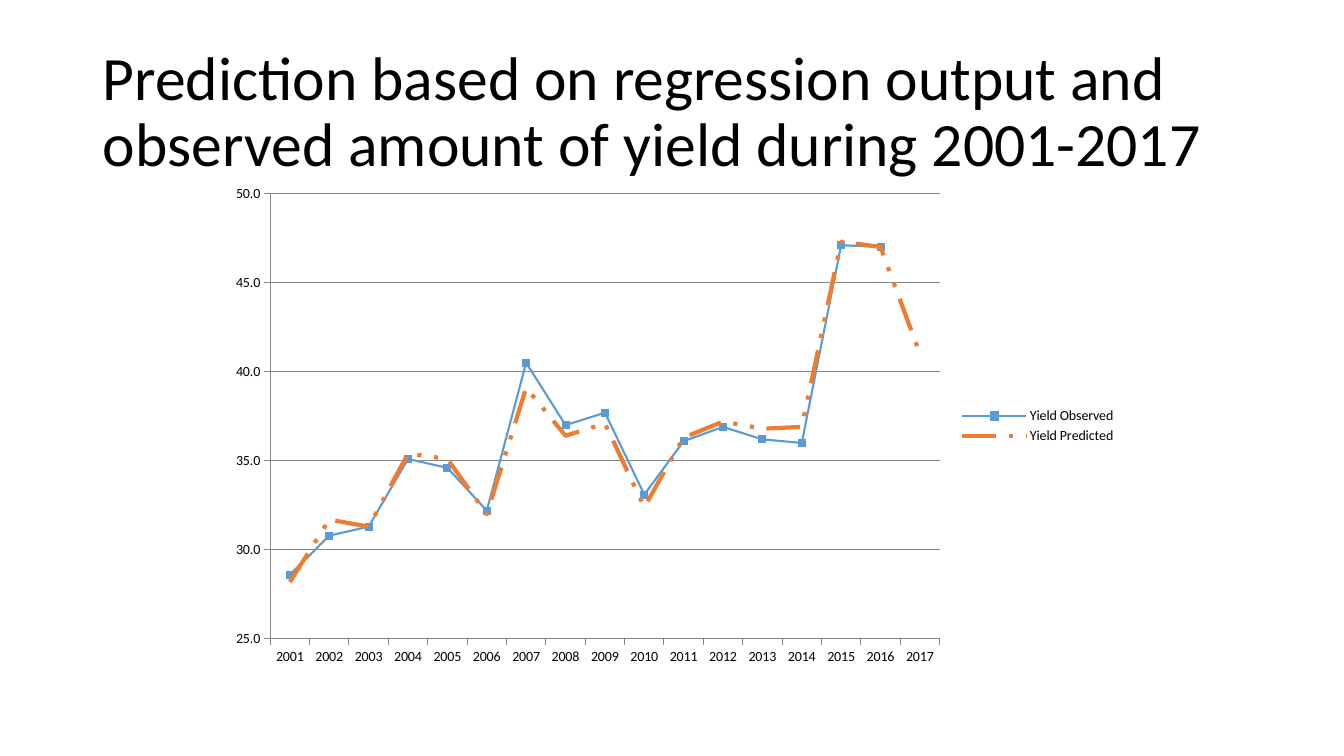
"""Build a slide that charts observed and predicted yield."""
from dataclasses import dataclass
from typing import Optional

from lxml.etree import SubElement as Sub
from pptx import Presentation
from pptx.chart.data import CategoryChartData as Data
from pptx.dml.color import RGBColor as Rgb
from pptx.enum.chart import XL_CHART_TYPE as Kind
from pptx.enum.chart import XL_LEGEND_POSITION as Place
from pptx.enum.chart import XL_MARKER_STYLE as Mark
from pptx.enum.chart import XL_TICK_MARK as Tick
from pptx.enum.dml import MSO_LINE as Dash
from pptx.enum.text import MSO_ANCHOR as Anchor
from pptx.enum.text import MSO_AUTO_SIZE as Fit
from pptx.enum.text import PP_ALIGN as Align
from pptx.oxml.ns import qn
from pptx.util import Inches, Pt

FONT = "Calibri"
HUES = {"text": "000000", "axis": "878787", "seen": "5B9BD5", "guess": "ED7D31"}
WIDE, HIGH = Inches(13.33), Inches(7.5)
YEARS = range(2001, 2018)


@dataclass(frozen=True)
class Box:
    """Hold a place as shares of its frame."""
    left: float
    top: float
    width: float
    height: float

    def scale(self) -> tuple[int, int, int, int]:
        """Return the place on the slide in length units."""
        return (int(self.left * WIDE), int(self.top * HIGH),
                int(self.width * WIDE), int(self.height * HIGH))


@dataclass(frozen=True)
class Trend:
    """Describe one line of the chart."""
    name: str
    hue: str
    width: float
    dash: Dash
    mark: Mark
    vals: tuple[Optional[float], ...]


HEAD = Box(0.92 / 13.33, 0.4 / 7.5, 11.5 / 13.33, 1.45 / 7.5)
GRAPH = Box(2.17 / 13.33, 1.75 / 7.5, 9 / 13.33, 4.95 / 7.5)
PLOT = Box(0.51 / 9, 0.17 / 4.95, 6.64 / 9, 4.42 / 4.95)

TRENDS = (
    Trend("Yield Observed", "seen", 1.5, Dash.SOLID, Mark.SQUARE,
          (28.6, 30.8, 31.3, 35.1, 34.6, 32.2, 40.5, 37, 37.7,
           33.1, 36.1, 36.9, 36.2, 36, 47.1, 47, None)),
    Trend("Yield Predicted", "guess", 3, Dash.DASH_DOT_DOT, Mark.NONE,
          (28.2, 31.7, 31.3, 35.4, 35.1, 32, 39.1, 36.4, 37.1,
           32.4, 36.3, 37.2, 36.8, 36.9, 47.3, 47, 41)),
)


def tint(name: str) -> Rgb:
    """Return a named colour."""
    return Rgb.from_string(HUES[name])


def style(font, size: float) -> None:
    """Set the face, size and colour of a font."""
    font.name, font.size = FONT, Pt(size)
    font.color.rgb = tint("text")


def rule(line, hue: str, width: float) -> None:
    """Set the colour and width of a line."""
    line.color.rgb = tint(hue)
    line.width = Pt(width)


def add_head(slide, text: str) -> None:
    """Fill and place the title."""
    head = slide.shapes.title
    head.left, head.top, head.width, head.height = HEAD.scale()
    frame = head.text_frame
    frame.text = text
    frame.word_wrap = True
    frame.auto_size = Fit.NONE
    frame.vertical_anchor = Anchor.MIDDLE
    para = frame.paragraphs[0]
    para.alignment = Align.LEFT
    para.line_spacing = 0.9
    style(para.runs[0].font, 44)


def pin(chart, box: Box) -> None:
    """Fix the inner plot area inside the chart."""
    area = chart.element.find(".//" + qn("c:plotArea"))
    for old in area.findall(qn("c:layout")):
        area.remove(old)
    root = area.makeelement(qn("c:layout"))
    area.insert(0, root)
    spot = Sub(root, qn("c:manualLayout"))
    parts = {"layoutTarget": "inner", "xMode": "edge", "yMode": "edge",
             "x": box.left, "y": box.top, "w": box.width, "h": box.height}
    for tag, val in parts.items():
        Sub(spot, qn("c:" + tag)).set("val", str(val))


def draw(line, trend: Trend) -> None:
    """Format one chart line and its markers."""
    line.smooth = False
    rule(line.format.line, trend.hue, trend.width)
    line.format.line.dash_style = trend.dash
    line.marker.style = trend.mark
    if trend.mark is not Mark.NONE:
        line.marker.size = 5
        line.marker.format.fill.solid()
        line.marker.format.fill.fore_color.rgb = tint(trend.hue)
        rule(line.marker.format.line, trend.hue, 0.75)


def add_graph(slide) -> None:
    """Add the line chart."""
    data = Data(number_format="0.0")
    data.categories = [str(year) for year in YEARS]
    for trend in TRENDS:
        data.add_series(trend.name, trend.vals)
    chart = slide.shapes.add_chart(Kind.LINE_MARKERS, *GRAPH.scale(), data).chart
    style(chart.font, 10)
    chart.has_title = False
    chart.has_legend = True
    chart.legend.position = Place.RIGHT
    chart.legend.include_in_layout = False
    chart.plots[0].vary_by_categories = False
    for axis in (chart.category_axis, chart.value_axis):
        axis.major_tick_mark = Tick.OUTSIDE
        axis.minor_tick_mark = Tick.NONE
        rule(axis.format.line, "axis", 0.75)
    scale = chart.value_axis
    scale.minimum_scale, scale.maximum_scale, scale.major_unit = 25, 50, 5
    scale.tick_labels.number_format = "0.0"
    scale.tick_labels.number_format_is_linked = False
    scale.has_major_gridlines = True
    rule(scale.major_gridlines.format.line, "axis", 0.75)
    for line, trend in zip(chart.plots[0].series, TRENDS):
        draw(line, trend)
    pin(chart, PLOT)


def main() -> None:
    """Build and save the deck."""
    deck = Presentation()
    deck.slide_width, deck.slide_height = WIDE, HIGH
    slide = deck.slides.add_slide(deck.slide_layouts.get_by_name("Title Only"))
    add_head(slide, "Prediction based on regression output and "
                    "observed amount of yield during 2001-2017")
    add_graph(slide)
    deck.save("out.pptx")


if __name__ == "__main__":
    main()
